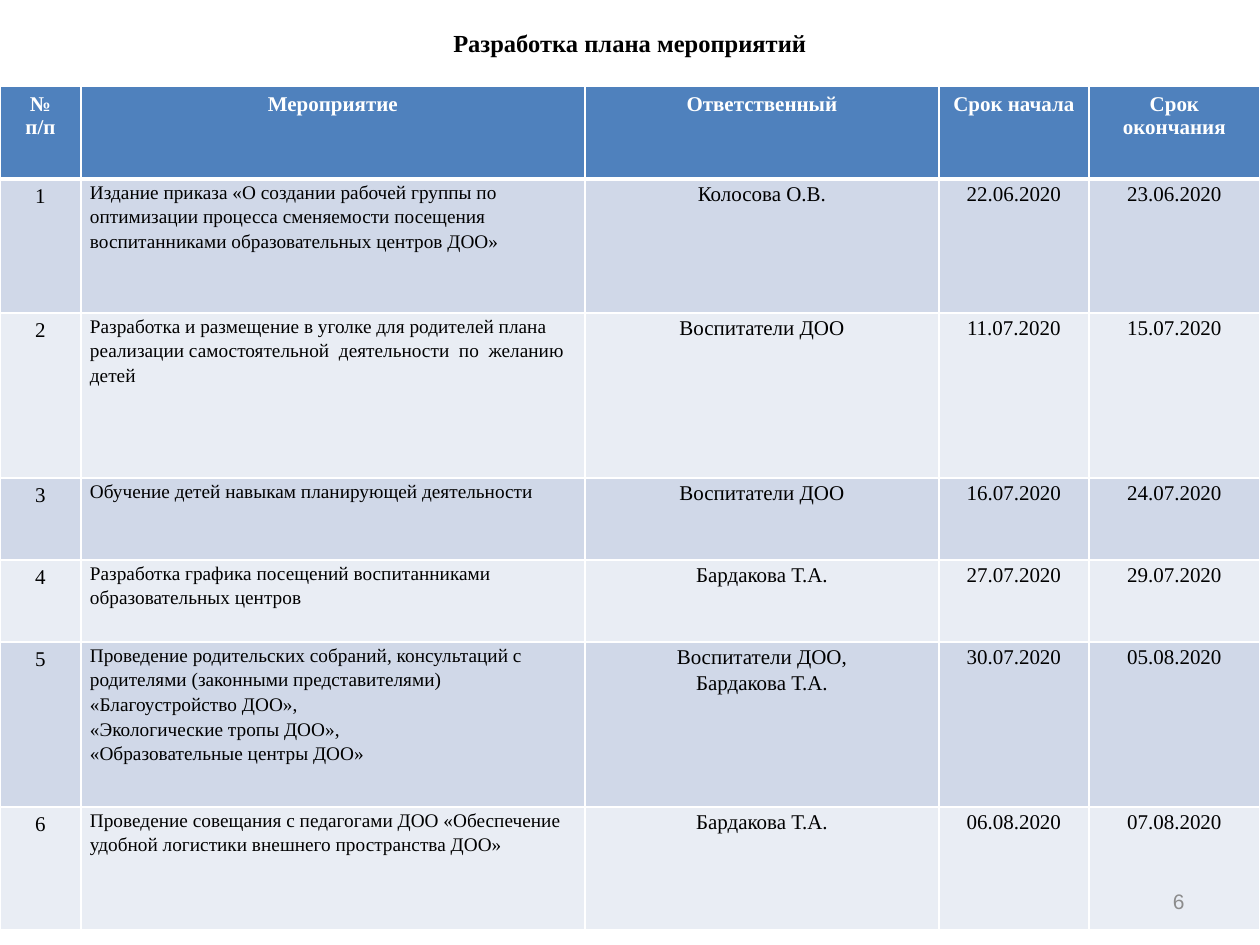
from dataclasses import dataclass

from lxml.etree import SubElement
from pptx import Presentation
from pptx.dml.color import RGBColor
from pptx.enum.text import MSO_ANCHOR as Anchor, PP_ALIGN as Align
from pptx.oxml.ns import qn
from pptx.util import Emu, Pt

PIXELS_PER_INCH = 126
WHITE = RGBColor(0xFF, 0xFF, 0xFF)
BLACK = RGBColor(0x00, 0x00, 0x00)
GREY = RGBColor(0x8C, 0x8C, 0x8C)
HEADER_BLUE = RGBColor(0x4F, 0x81, 0xBD)
BANDS = (RGBColor(0xD0, 0xD8, 0xE8), RGBColor(0xE9, 0xED, 0xF4))
SERIF = "Times New Roman"


def px(length: int) -> Emu:
    return Emu(round(length * 914400 / PIXELS_PER_INCH))


@dataclass(frozen=True)
class TextStyle:
    size: int
    color: RGBColor = BLACK
    bold: bool = False
    font: str = SERIF
    align: Align = Align.CENTER
    line_spacing: float = 1.0


@dataclass(frozen=True)
class Event:
    name: str
    responsible: str
    start: str
    end: str


TITLE = TextStyle(14, bold=True)
HEADER = TextStyle(12, WHITE, bold=True)
NUMBER = TextStyle(12)
NAME = TextStyle(11, align=Align.LEFT, line_spacing=1.15)
DETAIL = TextStyle(12, line_spacing=1.15)
PAGE = TextStyle(12, GREY, font="Arial", align=Align.RIGHT)

COLUMN_WIDTHS = (81, 504, 354, 150, 171)
ROW_HEIGHTS = (93, 134, 165, 82, 82, 165, 123)
HEADINGS = ("№ п/п", "Мероприятие", "Ответственный", "Срок начала", "Срок окончания")
EVENTS = (
    Event("Издание приказа «О создании рабочей группы по оптимизации процесса "
          "сменяемости посещения воспитанниками образовательных центров ДОО»",
          "Колосова О.В.", "22.06.2020", "23.06.2020"),
    Event("Разработка и размещение в уголке для родителей плана реализации "
          "самостоятельной  деятельности  по  желанию детей",
          "Воспитатели ДОО", "11.07.2020", "15.07.2020"),
    Event("Обучение детей навыкам планирующей деятельности",
          "Воспитатели ДОО", "16.07.2020", "24.07.2020"),
    Event("Разработка графика посещений воспитанниками образовательных центров",
          "Бардакова Т.А.", "27.07.2020", "29.07.2020"),
    Event("Проведение родительских собраний, консультаций с родителями "
          "(законными представителями) «Благоустройство ДОО»,\n"
          "«Экологические тропы ДОО»,\n«Образовательные центры ДОО»",
          "Воспитатели ДОО,\nБардакова Т.А.", "30.07.2020", "05.08.2020"),
    Event("Проведение совещания с педагогами ДОО «Обеспечение удобной логистики "
          "внешнего пространства ДОО»",
          "Бардакова Т.А.", "06.08.2020", "07.08.2020"),
)


def write_text(text_frame, text: str, style: TextStyle) -> None:
    text_frame.word_wrap = True
    for index, line in enumerate(text.split("\n")):
        paragraph = text_frame.add_paragraph() if index else text_frame.paragraphs[0]
        paragraph.alignment = style.align
        paragraph.line_spacing = style.line_spacing
        run = paragraph.add_run()
        run.text = line
        run.font.name = style.font
        run.font.size = Pt(style.size)
        run.font.bold = style.bold
        run.font.color.rgb = style.color


def add_text_box(slide, left: int, top: int, width: int, height: int,
                 text: str, style: TextStyle) -> None:
    shape = slide.shapes.add_textbox(px(left), px(top), px(width), px(height))
    shape.text_frame.vertical_anchor = Anchor.MIDDLE
    write_text(shape.text_frame, text, style)


def set_borders(cell, widths: dict[str, int]) -> None:
    properties = cell._tc.get_or_add_tcPr()
    for index, (side, width) in enumerate(widths.items()):
        line = SubElement(properties, qn(f"a:ln{side}"), w=str(Pt(width)))
        fill = SubElement(line, qn("a:solidFill"))
        SubElement(fill, qn("a:srgbClr"), val=str(WHITE))
        properties.insert(index, line)


def fill_cell(cell, text: str, style: TextStyle, color: RGBColor,
              top_border: int = 1, bottom_border: int = 1) -> None:
    cell.fill.solid()
    cell.fill.fore_color.rgb = color
    set_borders(cell, {"L": 1, "R": 1, "T": top_border, "B": bottom_border})
    if style.line_spacing > 1:
        cell.margin_left = cell.margin_right = px(9)
        cell.margin_top = cell.margin_bottom = 0
    write_text(cell.text_frame, text, style)


def add_plan_table(slide, left: int, top: int) -> None:
    table = slide.shapes.add_table(
        len(ROW_HEIGHTS), len(COLUMN_WIDTHS), px(left), px(top),
        px(sum(COLUMN_WIDTHS)), px(sum(ROW_HEIGHTS))).table
    for column, width in zip(table.columns, COLUMN_WIDTHS):
        column.width = px(width)
    for row, height in zip(table.rows, ROW_HEIGHTS):
        row.height = px(height)
    for column, heading in enumerate(HEADINGS):
        fill_cell(table.cell(0, column), heading, HEADER, HEADER_BLUE, bottom_border=3)
    styles = (NUMBER, NAME, DETAIL, DETAIL, DETAIL)
    for row, event in enumerate(EVENTS, start=1):
        values = (str(row), event.name, event.responsible, event.start, event.end)
        for column, (value, style) in enumerate(zip(values, styles)):
            fill_cell(table.cell(row, column), value, style, BANDS[(row - 1) % 2],
                      top_border=3 if row == 1 else 1)


def main() -> None:
    presentation = Presentation()
    presentation.slide_width = px(1260)
    presentation.slide_height = px(945)
    slide = presentation.slides.add_slide(presentation.slide_layouts[6])
    add_text_box(slide, 63, 9, 1134, 68, "Разработка плана мероприятий", TITLE)
    add_plan_table(slide, 0, 86)
    add_text_box(slide, 903, 876, 294, 50, "6", PAGE)
    presentation.save("out.pptx")


if __name__ == "__main__":
    main()
